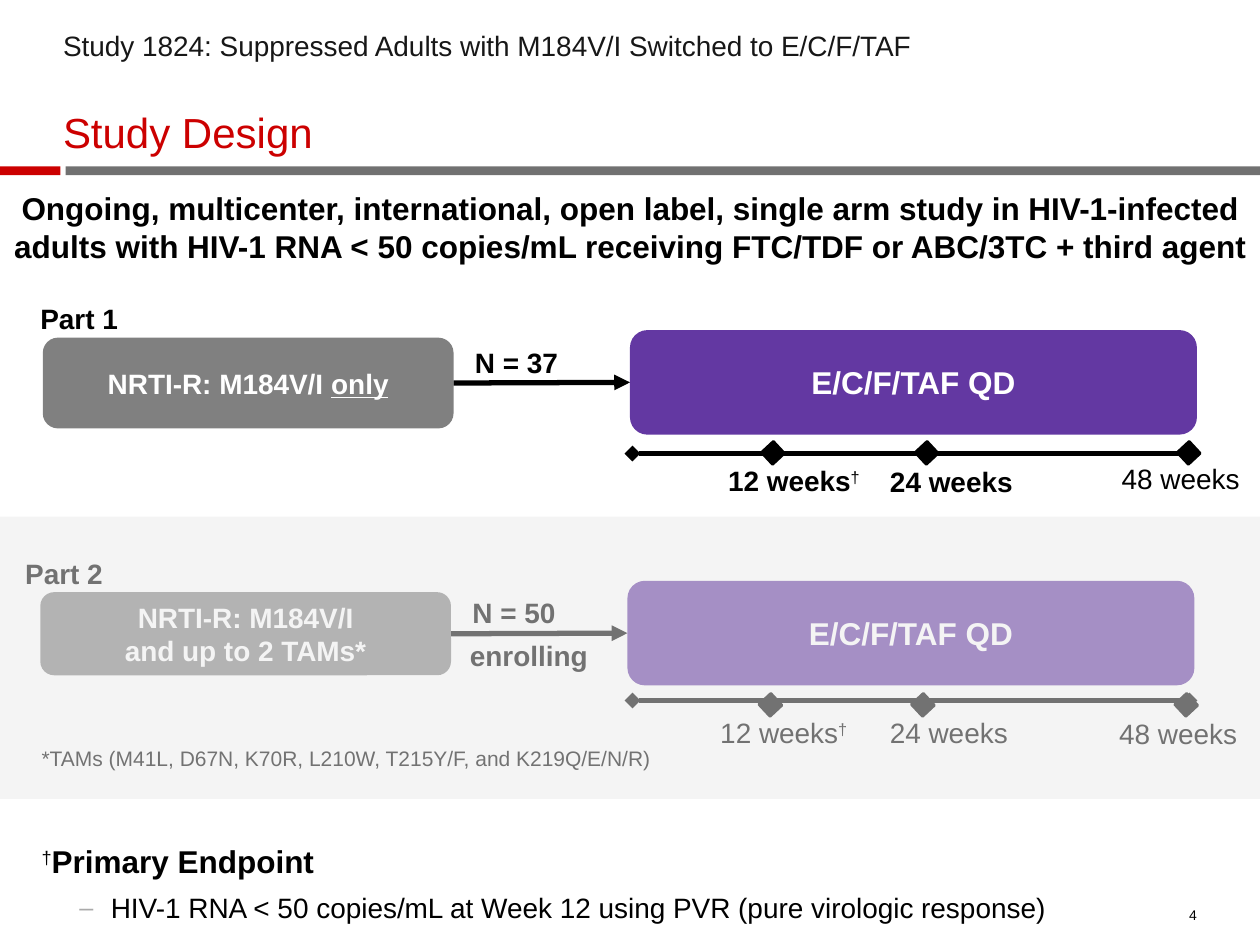
from dataclasses import dataclass
from typing import NamedTuple

from lxml import etree
from pptx import Presentation
from pptx.dml.color import RGBColor
from pptx.enum.shapes import MSO_CONNECTOR, MSO_SHAPE
from pptx.enum.text import MSO_ANCHOR, MSO_AUTO_SIZE, PP_ALIGN
from pptx.oxml.ns import qn
from pptx.util import Inches, Pt

RECTANGLE, ROUNDED = MSO_SHAPE.RECTANGLE, MSO_SHAPE.ROUNDED_RECTANGLE
STRAIGHT = MSO_CONNECTOR.STRAIGHT
TOP, MIDDLE, BOTTOM = MSO_ANCHOR.TOP, MSO_ANCHOR.MIDDLE, MSO_ANCHOR.BOTTOM
LEFT, CENTER, RIGHT = PP_ALIGN.LEFT, PP_ALIGN.CENTER, PP_ALIGN.RIGHT
LEFT_SIDE, RIGHT_SIDE = 1, 3

BLACK = RGBColor(0, 0, 0)
WHITE = RGBColor(0xFF, 0xFF, 0xFF)
INK = RGBColor(0x17, 0x17, 0x17)
RED = RGBColor(0xCC, 0, 0)
RULE_GRAY = RGBColor(0x71, 0x71, 0x71)
BOX_GRAY = RGBColor(0x80, 0x80, 0x80)
PURPLE = RGBColor(0x63, 0x38, 0xA2)
VEIL_GRAY = RGBColor(0xEA, 0xEA, 0xEA)

# The slide is a grid of 10 columns by 7.5 rows of square cells.
SLIDE_WIDTH, SLIDE_HEIGHT = Inches(10), Inches(7.5)
COLUMN, ROW = SLIDE_WIDTH / 10, SLIDE_HEIGHT / 7.5
MARKER_SIZE = 0.13


class Area(NamedTuple):
    """Left, top, width and height in columns and rows."""
    left: float
    top: float
    width: float
    height: float

    def lengths(self):
        cells = (COLUMN, ROW, COLUMN, ROW)
        return [round(value * cell) for value, cell in zip(self, cells)]


class Span(NamedTuple):
    text: str
    bold: bool | None = None
    underline: bool | None = None
    raised: bool = False


class Visit(NamedTuple):
    """One time point: its marker, and its label's place and style."""
    marker: float
    label_left: float
    label_top: float
    spans: list[Span]
    bold: bool = False


@dataclass
class Part:
    name: str
    name_at: tuple[float, float]
    left: float
    arm: Area
    arm_lines: list[list[Span]]
    treatment_top: float
    notes: list[tuple[str, float, float]]
    axis: float
    marker_top: float
    visits: list[Visit]


DAGGER = Span("†", bold=False, raised=True)
PARTS = [
    Part("Part 1", (0.32, 2.42), 5, Area(0.34, 2.68, 3.26, 0.72),
         [[Span("NRTI-R: M184V/I "), Span("only", underline=True)]],
         2.62, [("N = 37", 3.77, 2.77)], 3.6, 3.53,
         [Visit(6.07, 5.59, 3.71, [Span("12 weeks"), DAGGER], True),
          Visit(7.29, 6.84, 3.72, [Span("24 weeks")], True),
          Visit(9.37, 8.66, 3.69, [Span("48 weeks")])]),
    Part("Part 2", (0.2, 4.45), 4.98, Area(0.32, 4.7, 3.26, 0.66),
         [[Span("NRTI-R: M184V/I")], [Span("and up to 2 TAMs*")]],
         4.61, [("N = 50", 3.75, 4.76), ("enrolling", 3.73, 5.1)], 5.56, 5.53,
         [Visit(6.05, 5.51, 5.71, [Span("12 weeks"), DAGGER]),
          Visit(7.26, 6.82, 5.71, [Span("24 weeks")]),
          Visit(9.35, 8.64, 5.72, [Span("48 weeks")])]),
]


def write(para, spans: list[Span], size: float, color: RGBColor,
          bold: bool = False, align=LEFT, spacing: float = 0.9) -> None:
    para.alignment, para.line_spacing = align, spacing
    font = para.font
    font.name, font.size, font.bold = "Arial", Pt(size), bold
    font.color.rgb = color
    for span in spans:
        run = para.add_run()
        run.text = span.text
        if span.bold is not None:
            run.font.bold = span.bold
        if span.underline:
            run.font.underline = True
        if span.raised:
            run._r.get_or_add_rPr().set("baseline", "30000")


def set_frame(frame, anchor=TOP, inset: float = 0, wrap: bool = True) -> None:
    frame.auto_size, frame.word_wrap = MSO_AUTO_SIZE.NONE, wrap
    frame.vertical_anchor = anchor
    frame.margin_left = frame.margin_right = Inches(inset)
    frame.margin_top = frame.margin_bottom = Inches(inset / 2)


def add_text(page, area: Area, spans: list[Span], size: float = 16, bold: bool = False,
             align=LEFT, anchor=TOP, inset: float = 0, wrap: bool = True,
             spacing: float = 0.9) -> None:
    box = page.shapes.add_textbox(*area.lengths())
    set_frame(box.text_frame, anchor, inset, wrap)
    write(box.text_frame.paragraphs[0], spans, size, BLACK, bold, align, spacing)


def add_block(page, area: Area, color: RGBColor, kind=RECTANGLE):
    block = page.shapes.add_shape(kind, *area.lengths())
    block.shadow.inherit = False
    block.fill.solid()
    block.fill.fore_color.rgb = color
    block.line.fill.background()
    return block


def add_box(page, area: Area, color: RGBColor, lines: list[list[Span]], size: float):
    box = add_block(page, area, color, ROUNDED)
    frame = box.text_frame
    set_frame(frame, MIDDLE, 0.1)
    for index, spans in enumerate(lines):
        para = frame.add_paragraph() if index else frame.paragraphs[0]
        write(para, spans, size, WHITE, True, CENTER, 1)
    return box


def add_line(page, start: tuple[float, float], end: tuple[float, float], **ends: str):
    """Draw a line; ends maps headEnd and tailEnd to arrowhead types."""
    points = [round(value * cell) for value, cell in zip(start + end, (COLUMN, ROW) * 2)]
    line = page.shapes.add_connector(STRAIGHT, *points)
    line.line.width = Pt(3)
    line.line.color.rgb = BLACK
    properties = line._element.spPr
    outline = properties.find(qn("a:ln"))
    for tag, kind in ends.items():
        etree.SubElement(outline, qn(f"a:{tag}"), type=kind)
    etree.SubElement(properties, qn("a:effectLst"))
    return line


def add_marker(page, left: float, top: float) -> None:
    marker = add_block(page, Area(left, top, MARKER_SIZE, MARKER_SIZE), BLACK)
    marker.rotation = 47
    marker.line.color.rgb = BLACK
    marker.line.width = Pt(1.5)


def add_part(page, part: Part) -> None:
    add_text(page, Area(*part.name_at, 1.92, 0.24), [Span(part.name)], bold=True)
    arm = add_box(page, part.arm, BOX_GRAY, part.arm_lines, 16)
    treatment = add_box(page, Area(part.left, part.treatment_top, 4.5, 0.83), PURPLE,
                        [[Span("E/C/F/TAF QD")]], 18)
    arrow = add_line(page, (0, 0), (1, 1), tailEnd="triangle")
    arrow.begin_connect(arm, RIGHT_SIDE)
    arrow.end_connect(treatment, LEFT_SIDE)
    for note, left, top in part.notes:
        add_text(page, Area(left, top, 0.97, 0.24), [Span(note)], bold=True)
    add_line(page, (5.02, part.axis), (9.44, part.axis), headEnd="diamond", tailEnd="diamond")
    for visit in part.visits:
        add_marker(page, visit.marker, part.marker_top)
        add_text(page, Area(visit.label_left, visit.label_top, 1.42, 0.33), visit.spans,
                 bold=visit.bold, align=CENTER, wrap=False)


def place(holder, area: Area, anchor=TOP):
    holder.left, holder.top, holder.width, holder.height = area.lengths()
    set_frame(holder.text_frame, anchor)
    return holder.text_frame


def set_bullet(para, mark: str | None, left: float = 0, hanging: float = 0) -> None:
    properties = para._p.get_or_add_pPr()
    properties.set("marL", str(Inches(left)))
    properties.set("indent", str(-Inches(hanging)))
    bullet = []
    if mark:
        color = etree.Element(qn("a:buClr"))
        etree.SubElement(color, qn("a:srgbClr"), val="AAAAAA")
        bullet = [color, etree.Element(qn("a:buSzPct"), val="90000"),
                  etree.Element(qn("a:buChar"), char=mark)]
    else:
        bullet = [etree.Element(qn("a:buNone"))]
    for element in bullet:
        properties.find(qn("a:defRPr")).addprevious(element)


def fill_placeholders(page) -> None:
    title, topic, endpoint = page.placeholders
    frame = place(title, Area(0.5, 0.51, 9, 0.74), BOTTOM)
    write(frame.paragraphs[0], [Span("Study Design")], 24, RED)

    para = place(topic, Area(0.5, 0.17, 9, 0.33), BOTTOM).paragraphs[0]
    write(para, [Span("Study 1824: Suppressed Adults with M184V/I Switched to E/C/F/TAF")], 16, INK)
    para.space_before = Pt(0)
    set_bullet(para, None)

    frame = place(endpoint, Area(0.33, 5.94, 9.34, 1.2))
    rows = [
        ("*TAMs (M41L, D67N, K70R, L210W, T215Y/F, and K219Q/E/N/R)", 12, 12),
        ("Primary Endpoint", 18, 43),
        ("HIV-1 RNA < 50 copies/mL at Week 12 using PVR (pure virologic response)", 16, 8),
    ]
    for index, (text, size, before) in enumerate(rows):
        para = frame.add_paragraph() if index else frame.paragraphs[0]
        heading = index == 1
        write(para, [DAGGER, Span(text)] if heading else [Span(text)], size, BLACK, heading)
        para.space_before = Pt(before)
        if index == 2:
            para.level = 1
            set_bullet(para, "–", 0.55, 0.25)
        else:
            set_bullet(para, None)


def main() -> None:
    deck = Presentation()
    deck.slide_width, deck.slide_height = SLIDE_WIDTH, SLIDE_HEIGHT
    page = deck.slides.add_slide(deck.slide_layouts.get_by_name("Two Content"))
    add_block(page, Area(0.52, 1.32, 9.48, 0.07), RULE_GRAY)
    add_block(page, Area(0, 1.32, 0.48, 0.07), RED)
    fill_placeholders(page)
    add_text(page, Area(-0.08, 1.45, 10.17, 1.01), [Span(
        "Ongoing, multicenter, international, open label, single arm study in HIV-1-infected "
        "adults with HIV-1 RNA < 50 copies/mL receiving FTC/TDF or ABC/3TC + third agent")],
        18, True, CENTER, inset=0.1, spacing=1)
    for part in PARTS:
        add_part(page, part)
    add_text(page, Area(9.23, 7.15, 0.27, 0.18), [Span("4")], 8, align=RIGHT, anchor=BOTTOM, spacing=1)
    veil = add_block(page, Area(0, 4.1, 10, 2.24), VEIL_GRAY)
    etree.SubElement(veil._element.spPr.find(".//" + qn("a:srgbClr")), qn("a:alpha"), val="49000")
    deck.save("out.pptx")


if __name__ == "__main__":
    main()
